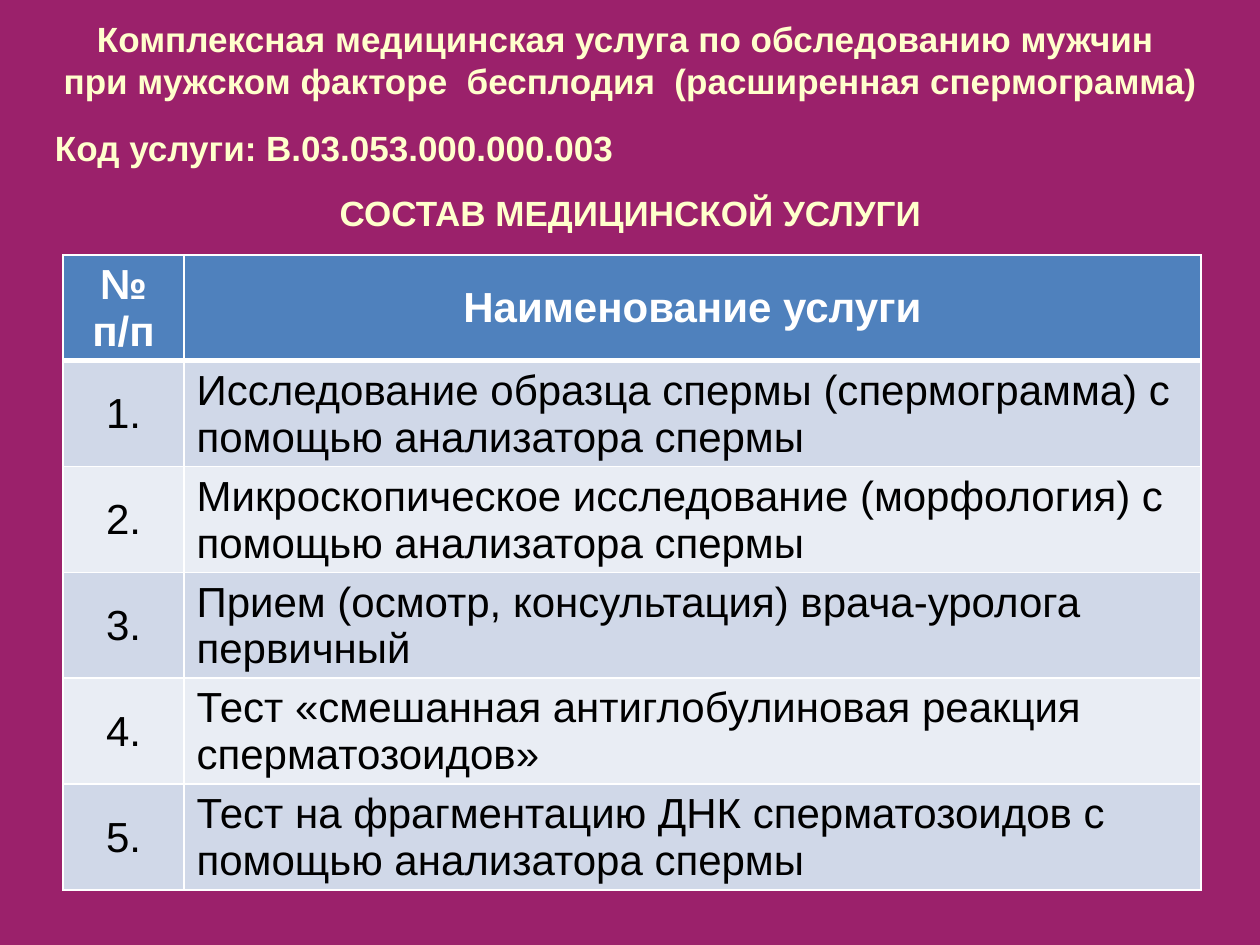
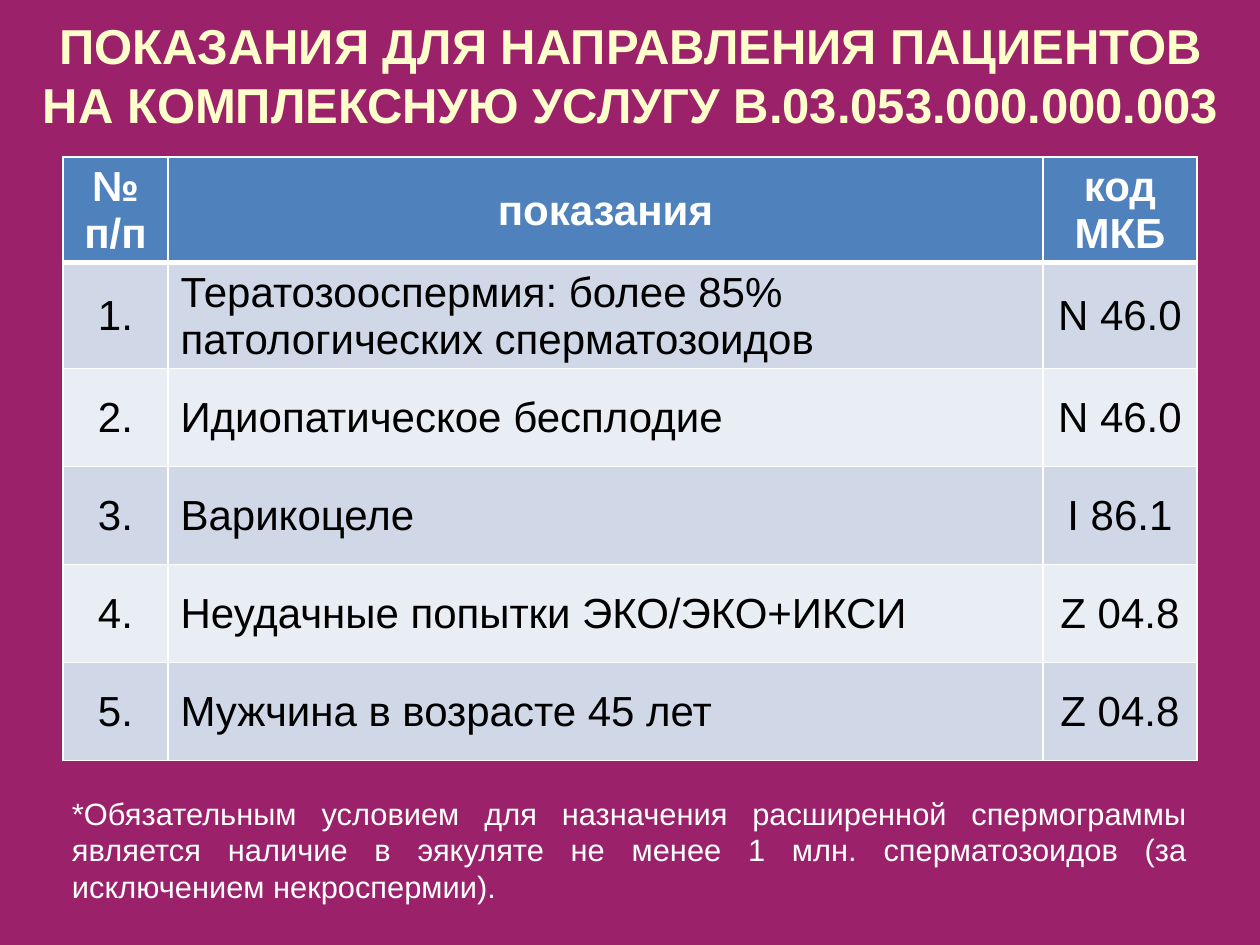
from lxml import etree
from pptx import Presentation
from pptx import util as u
from pptx.dml.color import RGBColor
from pptx.enum import text
from pptx.oxml.ns import qn

PX = 914400 / 126
WIDE, HIGH = 1260, 945
ROW = 98
FONT = "Arial"
BACK, CREAM, WHITE, BLACK = "9B216B", "FFFFCC", "FFFFFF", "000000"
HEAD, BANDS = "4F81BD", ("D0D8E8", "E9EDF4")
LEFT, MID, JUST = (text.PP_ALIGN.LEFT, text.PP_ALIGN.CENTER,
                   text.PP_ALIGN.JUSTIFY)
CENTRE, TOP = text.MSO_ANCHOR.MIDDLE, text.MSO_ANCHOR.TOP
CODE = "В.03.053.000.000.003"


def px(n):
    return u.Emu(round(n * PX))


def rgb(code):
    return RGBColor.from_string(code)


def put(thing, **form):
    for key, val in form.items():
        setattr(thing, key, val)


def style(par, size, color, bold, align, **more):
    put(par.font, name=FONT, size=u.Pt(size), bold=bold)
    par.font.color.rgb = rgb(color)
    put(par, alignment=align, **more)


def label(slide, box, words, size=20, color=CREAM, bold=True, align=MID,
          anchor=CENTRE, inset=13, after=0):
    frame = slide.shapes.add_textbox(*map(px, box)).text_frame
    put(frame, word_wrap=True, vertical_anchor=anchor, margin_left=px(inset))
    par = frame.paragraphs[0]
    par.text = words
    style(par, size, color, bold, align, space_after=u.Pt(after))


def border(cell, sides):
    """Draw white cell edges; sides maps L, R, T, B to points."""
    props = cell._tc.get_or_add_tcPr()
    for spot, (side, width) in enumerate(sides.items()):
        line = etree.Element(qn(f"a:ln{side}"), w=str(u.Pt(width)))
        fill = etree.SubElement(line, qn("a:solidFill"))
        etree.SubElement(fill, qn("a:srgbClr"), val=WHITE)
        props.insert(spot, line)


def grid(slide, left, top, cols, heads, items):
    """Numbered table: a header row, then one banded row for each item."""
    rows = [("№ п/п", *heads)]
    rows += [(f"{n}.", *item) for n, item in enumerate(items, 1)]
    box = (left, top, sum(cols), ROW * len(rows))
    table = slide.shapes.add_table(len(rows), len(cols),
                                   *map(px, box)).table
    table.horz_banding = False
    for col, width in zip(table.columns, cols):
        col.width = px(width)
    for r, row in enumerate(rows):
        table.rows[r].height = px(ROW)
        first = r == 0
        for c, words in enumerate(row):
            cell = table.cell(r, c)
            put(cell, text=words, vertical_anchor=CENTRE,
                margin_top=px(3), margin_bottom=px(2))
            cell.fill.solid()
            cell.fill.fore_color.rgb = rgb(HEAD if first else BANDS[(r - 1) % 2])
            border(cell, dict(L=1, R=1, T=3 if r == 1 else 1,
                              B=3 if first else 1))
            style(cell.text_frame.paragraphs[0], 24,
                  WHITE if first else BLACK, first,
                  LEFT if c == 1 and not first else MID)


def page(deck):
    slide = deck.slides.add_slide(deck.slide_layouts[6])
    fill = slide.background.fill
    fill.solid()
    fill.fore_color.rgb = rgb(BACK)
    return slide


def service(deck):
    slide = page(deck)
    label(slide, (10, 0, 1240, 118),
          "Комплексная медицинская услуга по обследованию мужчин \n"
          "при мужском факторе  бесплодия  (расширенная спермограмма)")
    grid(slide, 63, 255, (121, 1017), ["Наименование услуги"], [
        ["Исследование образца спермы (спермограмма) с помощью анализатора спермы"],
        ["Микроскопическое исследование (морфология) с помощью анализатора спермы"],
        ["Прием (осмотр, консультация) врача-уролога первичный"],
        ["Тест «смешанная антиглобулиновая реакция сперматозоидов»"],
        ["Тест на фрагментацию ДНК сперматозоидов с помощью анализатора спермы"],
    ])
    label(slide, (-10, 98, 689, 98), f"Код услуги: {CODE}", align=LEFT,
          inset=65)
    label(slide, (10, 168, 1240, 88), "СОСТАВ МЕДИЦИНСКОЙ УСЛУГИ")


def reasons(deck):
    slide = page(deck)
    label(slide, (10, 0, 1240, 149),
          f"ПОКАЗАНИЯ ДЛЯ НАПРАВЛЕНИЯ ПАЦИЕНТОВ НА КОМПЛЕКСНУЮ УСЛУГУ {CODE}",
          size=28)
    grid(slide, 63, 157, (105, 875, 154), ["показания", "код МКБ"], [
        ["Тератозооспермия: более 85% патологических сперматозоидов", "N 46.0"],
        ["Идиопатическое бесплодие", "N 46.0"],
        ["Варикоцеле", "I 86.1"],
        ["Неудачные попытки ЭКО/ЭКО+ИКСИ", "Z 04.8"],
        ["Мужчина в возрасте 45 лет", "Z 04.8"],
    ])
    label(slide, (59, 788, 1141, 134),
          "*Обязательным условием для назначения расширенной спермограммы "
          "является наличие в эякуляте не менее 1 млн. сперматозоидов "
          "(за исключением некроспермии).",
          size=17.6, color=WHITE, bold=False, align=JUST, anchor=TOP, after=12)


def main():
    deck = Presentation()
    put(deck, slide_width=px(WIDE), slide_height=px(HIGH))
    service(deck)
    reasons(deck)
    deck.save("out.pptx")


if __name__ == "__main__":
    main()
